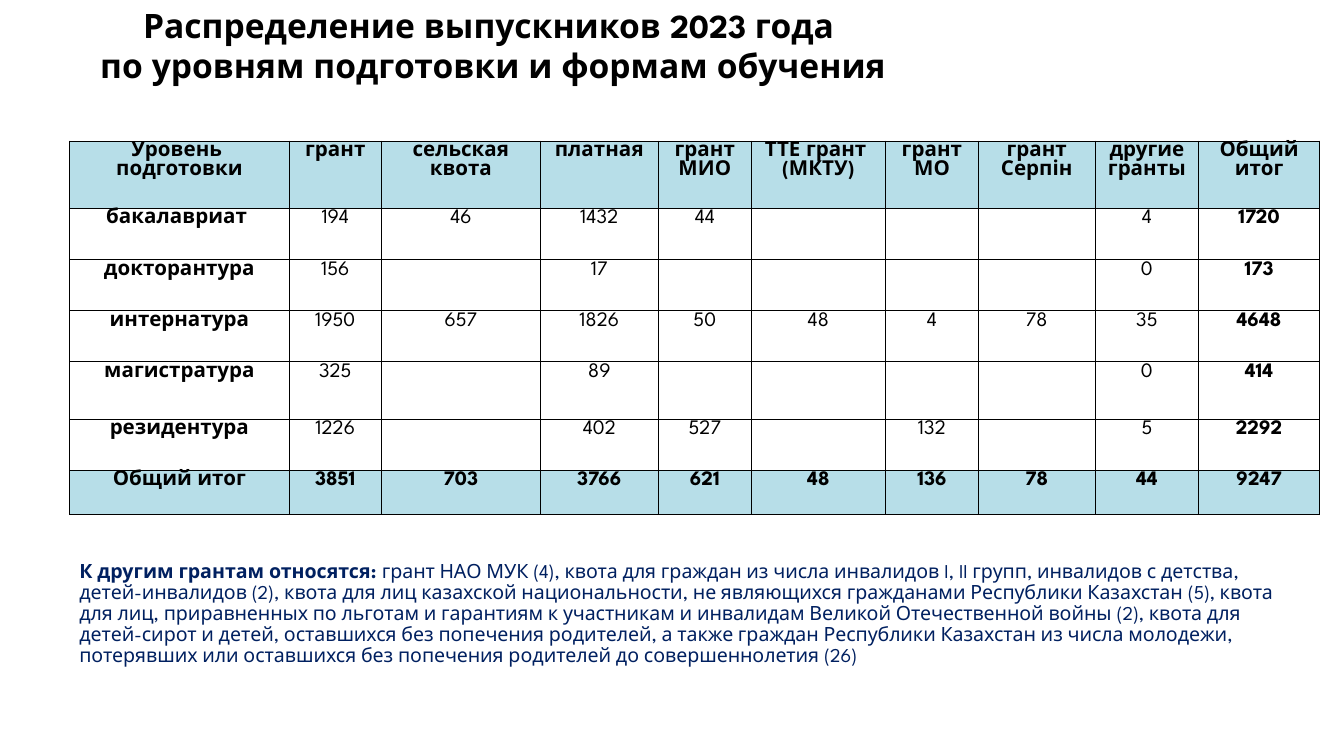
from lxml import etree
from pptx import Presentation
from pptx import util as u
from pptx.dml import color
from pptx.enum import text
from pptx.oxml import ns

COLORS = {"black": "000000", "navy": "002060", "header": "B7DEE8"}
FONT = "League Spartan"

COLUMN_WIDTHS = [1.63, 0.69, 1.18, 0.88, 0.69, 1, 0.69, 0.87, 0.77, 0.9]
ROW_HEIGHTS = [0.5, 0.38, 0.38, 0.38, 0.43, 0.38, 0.33]
ROWS = [
    ["Уровень \nподготовки", "грант", "сельская квота", "платная", "грант МИО",
     "ТТЕ грант  (МКТУ)", "грант МО", "грант Серпін", "другие гранты", "Общий итог"],
    ["бакалавриат ", "194", "46", "1432", "44", "", "", "", "4", "1720"],
    ["докторантура", "156", "", "17", "", "", "", "", "0", "173"],
    ["интернатура", "1950", "657", "1826", "50", "48", "4", "78", "35", "4648"],
    ["магистратура", "325", "", "89", "", "", "", "", "0", "414"],
    ["резидентура", "1226", "", "402", "527", "", "132", "", "5", "2292"],
    ["Общий итог", "3851", "703", "3766", "621", "48", "136", "78", "44", "9247"],
]
NOTE_LEAD = "К другим грантам относятся: "
NOTE = (
    "грант НАО МУК (4), квота для граждан из числа инвалидов I, II групп, "
    "инвалидов с детства, детей-инвалидов (2), квота для лиц казахской национальности, "
    "не являющихся гражданами Республики Казахстан (5), квота для лиц, приравненных "
    "по льготам и гарантиям к участникам и инвалидам Великой Отечественной войны (2), "
    "квота для детей-сирот и детей, оставшихся без попечения родителей, а также граждан "
    "Республики Казахстан из числа молодежи, потерявших или оставшихся без попечения "
    "родителей до совершеннолетия (26)"
)


def set_attributes(target, values):
    for name, value in values.items():
        setattr(target, name, value)


def set_font(font, size, bold, color_name="black"):
    set_attributes(font, {"name": FONT, "size": u.Pt(size), "bold": bold})
    font.color.rgb = color.RGBColor.from_string(COLORS[color_name])


def place(shape, left, top, width, height):
    set_attributes(shape, {"left": u.Inches(left), "top": u.Inches(top),
                           "width": u.Inches(width), "height": u.Inches(height)})


def set_frame(frame, side, edge):
    set_attributes(frame, {
        "word_wrap": True, "auto_size": text.MSO_AUTO_SIZE.NONE,
        "vertical_anchor": text.MSO_ANCHOR.MIDDLE,
        "margin_left": u.Inches(side), "margin_right": u.Inches(side),
        "margin_top": u.Inches(edge), "margin_bottom": u.Inches(edge)})


def add_title(slide):
    title = slide.shapes.title
    place(title, -0.64, 0, 8.62, 0.67)
    set_frame(title.text_frame, 0.1, 0.05)
    paragraph = title.text_frame.paragraphs[0]
    paragraph.text = "Распределение выпускников 2023 года \vпо уровням подготовки и формам обучения"
    set_attributes(paragraph, {"alignment": text.PP_ALIGN.CENTER, "line_spacing": 1.0})
    for run in paragraph.runs:
        set_font(run.font, 18, True)


def add_borders(cell):
    properties = cell._tc.get_or_add_tcPr()
    for position, side in enumerate(("lnL", "lnR", "lnT", "lnB")):
        line = etree.Element(ns.qn(f"a:{side}"), w=str(u.Pt(0.5)))
        fill = etree.SubElement(line, ns.qn("a:solidFill"))
        etree.SubElement(fill, ns.qn("a:srgbClr"), val=COLORS["black"])
        properties.insert(position, line)


def format_cell(cell, value, bold, filled):
    set_attributes(cell, {
        "margin_left": u.Inches(0.01), "margin_right": u.Inches(0.01),
        "margin_top": u.Inches(0.01), "margin_bottom": 0})
    cell.text = value
    for paragraph in cell.text_frame.paragraphs:
        paragraph.alignment = text.PP_ALIGN.CENTER
        for run in paragraph.runs:
            set_font(run.font, 11, bold)
    if filled:
        cell.fill.solid()
        cell.fill.fore_color.rgb = color.RGBColor.from_string(COLORS["header"])
    else:
        cell.fill.background()
    add_borders(cell)


def add_graduates_table(slide):
    table = slide.shapes.add_table(
        len(ROWS), len(COLUMN_WIDTHS), u.Inches(0.52), u.Inches(1.05),
        u.Inches(sum(COLUMN_WIDTHS)), u.Inches(sum(ROW_HEIGHTS))).table
    for column, width in zip(table.columns, COLUMN_WIDTHS):
        column.width = u.Inches(width)
    for row, height in zip(table.rows, ROW_HEIGHTS):
        row.height = u.Inches(height)

    # The header and total rows are filled; the outer columns are bold
    for row_index, values in enumerate(ROWS):
        filled = row_index in (0, len(ROWS) - 1)
        for column_index, value in enumerate(values):
            bold = filled or column_index in (0, len(values) - 1)
            format_cell(table.cell(row_index, column_index), value, bold, filled)


def add_note(slide):
    box = slide.shapes.add_textbox(0, 0, 0, 0)
    place(box, 0.52, 4.03, 9.05, 1.08)
    set_frame(box.text_frame, 0.07, 0.04)
    paragraph = box.text_frame.paragraphs[0]
    paragraph.line_spacing = 0.9
    for content, bold in ((NOTE_LEAD, True), (NOTE, False)):
        run = paragraph.add_run()
        run.text = content
        set_font(run.font, 10.5, bold, "navy")


def main():
    presentation = Presentation()
    # Widescreen, 16 to 9
    width = u.Inches(10)
    set_attributes(presentation, {"slide_width": width, "slide_height": width * 9 // 16})
    slide = presentation.slides.add_slide(presentation.slide_layouts[5])
    add_title(slide)
    add_graduates_table(slide)
    add_note(slide)
    presentation.save("out.pptx")


if __name__ == "__main__":
    main()
